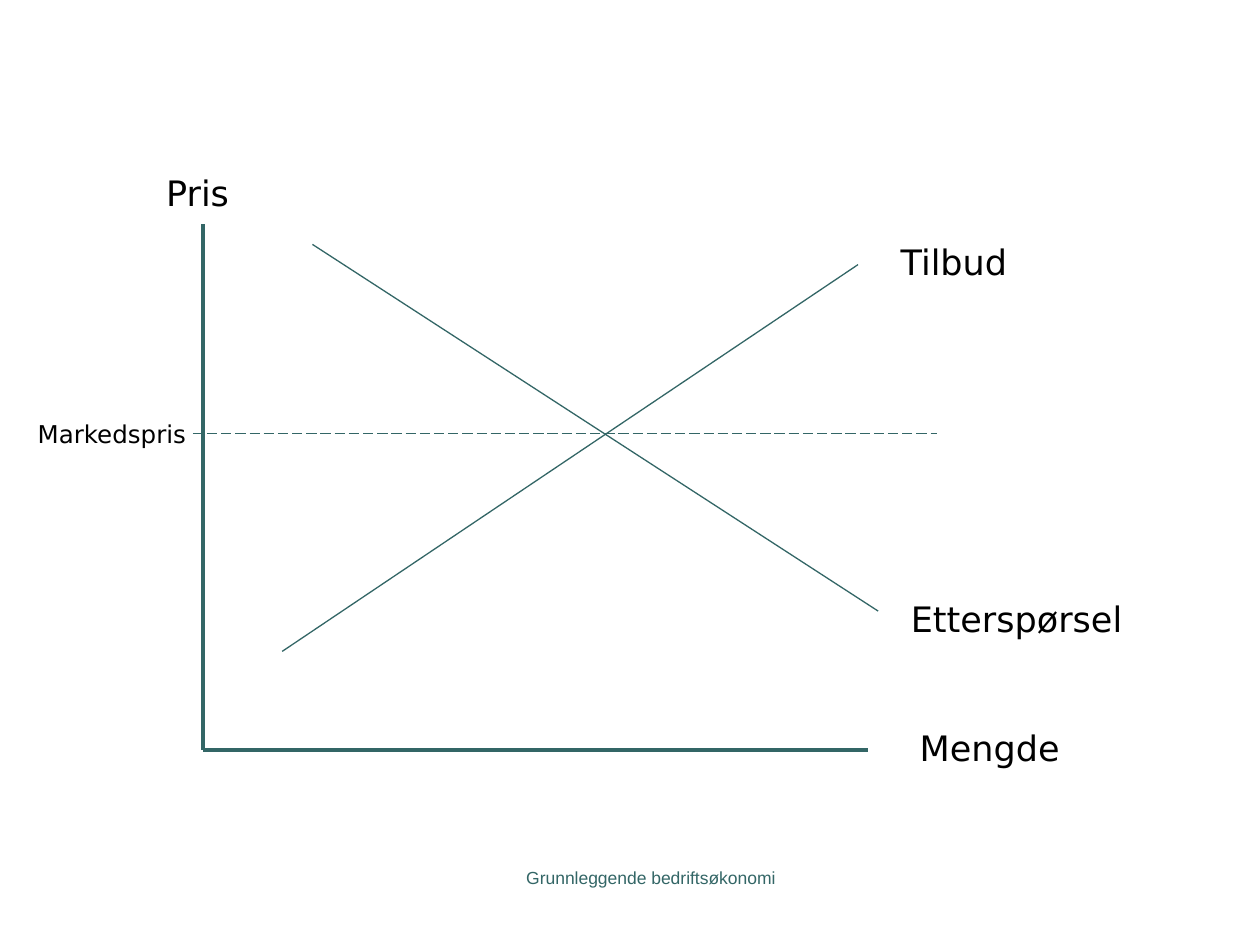
from dataclasses import dataclass

from lxml import etree
from pptx import Presentation
from pptx.dml.color import RGBColor
from pptx.enum.dml import MSO_LINE
from pptx.enum.shapes import MSO_CONNECTOR
from pptx.enum.text import MSO_AUTO_SIZE, PP_ALIGN
from pptx.oxml.ns import qn
from pptx.util import Inches, Pt

STRAIGHT = MSO_CONNECTOR.STRAIGHT
DASH = MSO_LINE.LONG_DASH
LEFT, CENTER = PP_ALIGN.LEFT, PP_ALIGN.CENTER
GROW = MSO_AUTO_SIZE.SHAPE_TO_FIT_TEXT
BLANK = 6
COLS, ROWS = 100, 75


@dataclass(frozen=True)
class Theme:
    ink: RGBColor = RGBColor(0x00, 0x00, 0x00)
    teal: RGBColor = RGBColor(0x33, 0x66, 0x66)
    label_font: str = "DejaVu Sans"
    foot_font: str = "Arial"
    label: float = 20
    small: float = 14
    foot: float = 10
    thick: float = 2.25
    thin: float = 0.75


class Graph:
    """Draws on one slide; lengths are columns and rows of the grid."""

    def __init__(self, deck, theme):
        self.theme = theme
        self.slide = deck.slides.add_slide(deck.slide_layouts[BLANK])
        self.col = deck.slide_width / COLS
        self.row = deck.slide_height / ROWS

    def spot(self, x, y):
        return round(x * self.col), round(y * self.row)

    def line(self, start, end, width, dash=None):
        line = self.slide.shapes.add_connector(
            STRAIGHT, *self.spot(*start), *self.spot(*end))
        line.line.color.rgb = self.theme.teal
        line.line.width = Pt(width)
        if dash is not None:
            line.line.dash_style = dash
        etree.SubElement(line._element.spPr, qn("a:effectLst"))

    def text(self, words, spot, size, points, font, color, align=LEFT):
        box = self.slide.shapes.add_textbox(*self.spot(*spot), *self.spot(*size))
        frame = box.text_frame
        frame.word_wrap = True
        frame.text = words
        para = frame.paragraphs[0]
        para.alignment = align
        style = para.runs[0].font
        style.name, style.size = font, Pt(points)
        style.color.rgb = color
        return frame

    def label(self, words, spot, size, points):
        frame = self.text(words, spot, size, points,
                          self.theme.label_font, self.theme.ink)
        frame.auto_size = GROW

    def footer(self, words, spot, size):
        self.text(words, spot, size, self.theme.foot,
                  self.theme.foot_font, self.theme.teal, CENTER)


def main():
    deck = Presentation()
    deck.slide_width, deck.slide_height = Inches(10), Inches(7.5)
    theme = Theme()
    graph = Graph(deck, theme)

    graph.footer("Grunnleggende bedriftsøkonomi", (35.8, 68.3), (31.7, 5))

    corner = (16.1, 59.5)
    graph.line((16.1, 17.8), corner, theme.thick)
    graph.line(corner, (68.9, 59.5), theme.thick)

    supply = (22.4, 51.7), (68.1, 21)
    demand = (24.8, 19.4), (69.7, 48.5)
    for curve in (supply, demand):
        graph.line(*curve, theme.thin)
    graph.line((15.3, 34.4), (74.4, 34.4), theme.thin, DASH)

    for words, spot, width in (
        ("Pris", (12.2, 13.1), 14.2),
        ("Tilbud", (70.5, 18.6), 14.2),
        ("Etterspørsel", (71.3, 46.9), 20.5),
        ("Mengde", (72, 57.2), 14.2),
    ):
        graph.label(words, spot, (width, 4.4), theme.label)
    graph.label("Markedspris", (2, 32.8), (14.2, 3.3), theme.small)

    deck.save("out.pptx")


if __name__ == "__main__":
    main()
